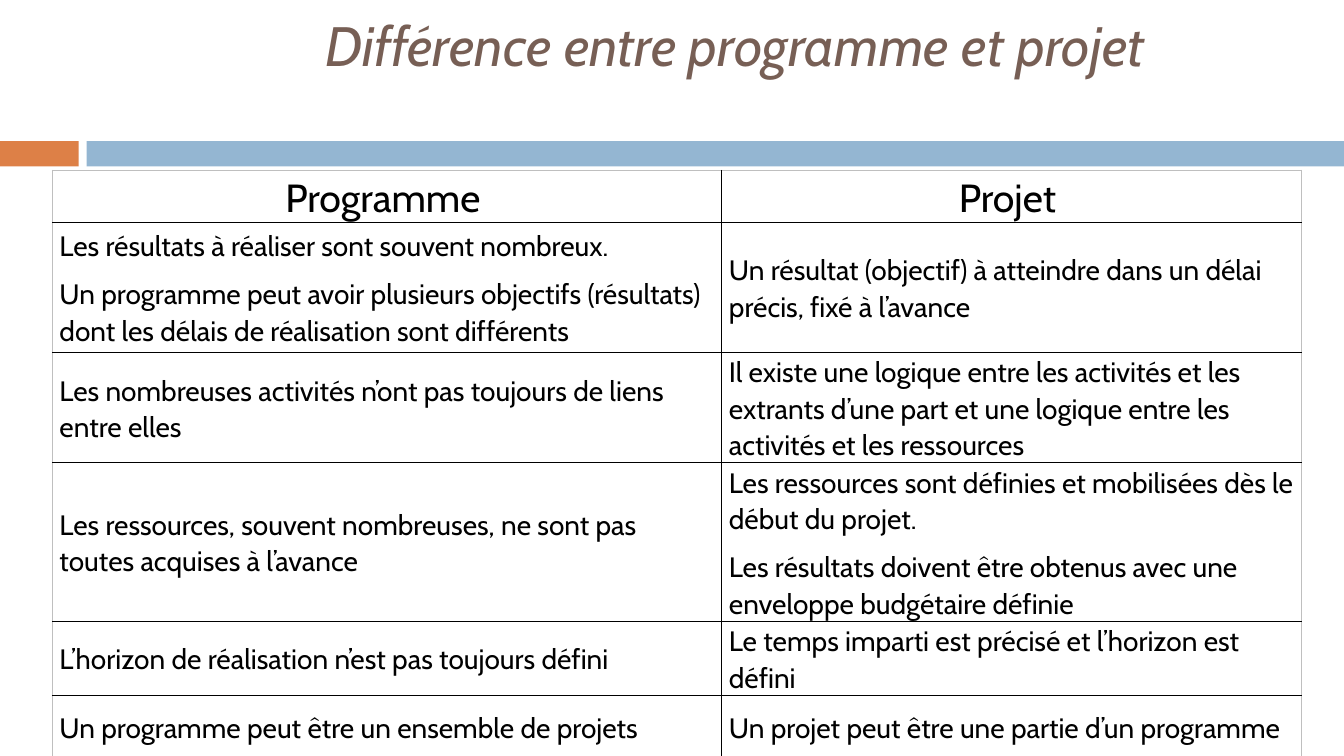
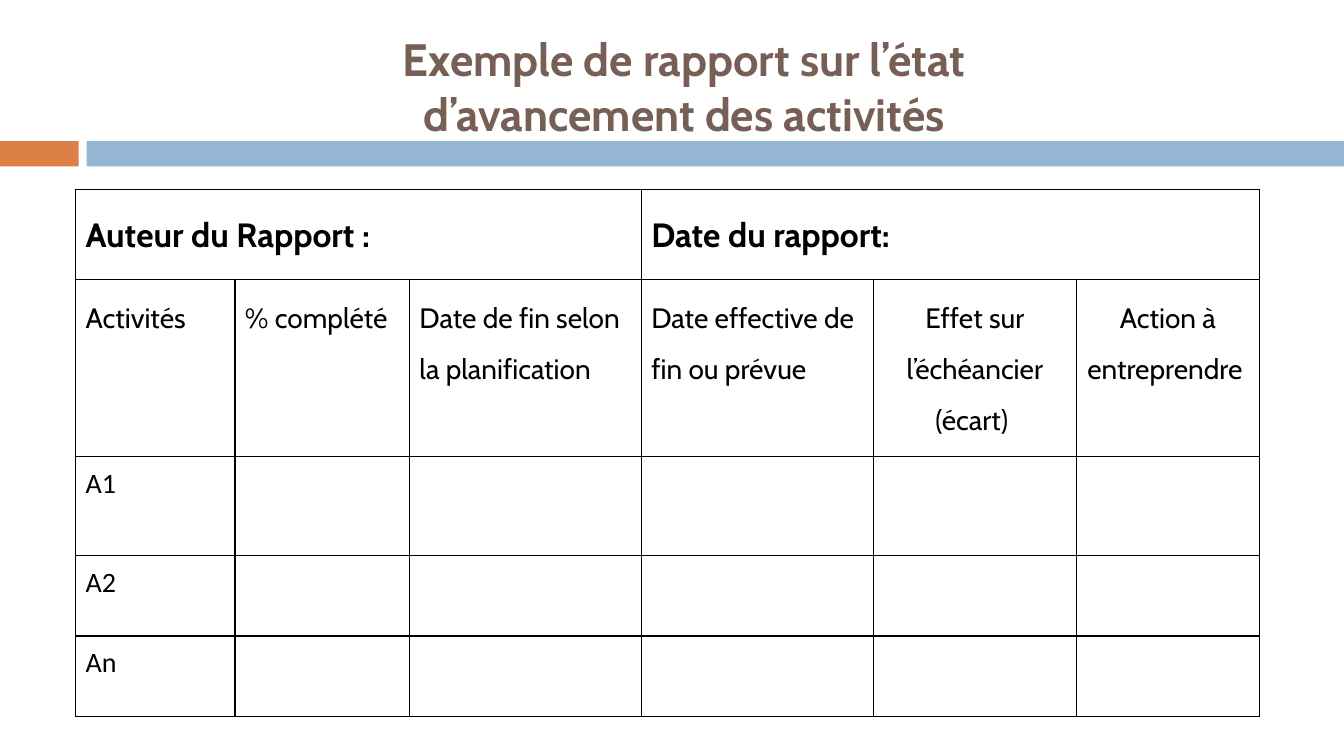
"""Build two slides comparing programmes with projects and showing a progress report."""
from lxml import etree
from pptx import Presentation
from pptx.dml.color import RGBColor
from pptx.enum.shapes import MSO_SHAPE
from pptx.enum.text import MSO_ANCHOR, MSO_AUTO_SIZE, PP_ALIGN
from pptx.oxml.ns import qn
from pptx.util import Inches, Pt

BLACK, GREY, BROWN = "000000", "BFBFBF", "775F55"
BANDS = [(0, 0.78, "DD8047"), (0.86, 12.47, "94B6D2")]

CENTERED = {"alignment": PP_ALIGN.CENTER}
TITLE_FONT = {"name": "Cabin"}
COMPARISON_PARAGRAPH = {"line_spacing": 1.07, "space_after": Pt(8)}
REPORT_PARAGRAPH = {"line_spacing": 1.5}
HEADING_FONT = {"name": "Cabin", "size": Pt(28)}
BODY_FONT = {"name": "Cabin", "size": Pt(20)}
REPORT_HEADING_FONT = {"name": "Cabin", "size": Pt(24), "bold": True}
ACTIVITY_FONT = {"name": "Calibri", "size": Pt(20)}

COMPARISON = {
    "title": ["Différence entre programme et projet"],
    "title_box": (2.09, 0.18, 10.4, 1.08),
    "title_margins": {"margin_top": 0, "margin_bottom": Inches(0.56)},
    "title_font": {"size": Pt(39.6), "italic": True},
    "table_corner": (0.52, 1.69),
    "columns": [6.64, 5.75],
    "row_heights": [0.31, 1.29, 0.96, 1.29, 0.63, 0.63],
    "outer_border": GREY,
    "cell_format": {
        "vertical_anchor": MSO_ANCHOR.MIDDLE,
        "margin_left": Inches(0.07),
        "margin_right": Inches(0.07),
        "margin_top": Inches(0.01),
        "margin_bottom": 0,
    },
    "rows": [
        ["Programme ", "Projet "],
        ["Les résultats à réaliser sont souvent nombreux.\n"
         "Un programme peut avoir plusieurs objectifs (résultats) "
         "dont les délais de réalisation sont différents",
         "Un résultat (objectif) à atteindre dans un délai précis, fixé à l’avance"],
        ["Les nombreuses activités n’ont pas toujours de liens entre elles",
         "Il existe une logique entre les activités et les extrants d’une part "
         "et une logique entre les activités et les ressources"],
        ["Les ressources, souvent nombreuses, ne sont pas toutes acquises à l’avance",
         "Les ressources sont définies et mobilisées dès le début du projet.\n"
         "Les résultats doivent être obtenus avec une enveloppe budgétaire définie"],
        ["L’horizon de réalisation n’est pas toujours défini",
         "Le temps imparti est précisé et l’horizon est défini"],
        ["Un programme peut être un ensemble de projets",
         "Un projet peut être une partie d’un programme"],
    ],
    "row_styles": [(COMPARISON_PARAGRAPH | CENTERED, HEADING_FONT)]
    + [(COMPARISON_PARAGRAPH, BODY_FONT)] * 5,
}

REPORT = {
    "title": ["Exemple de rapport sur l’état ", "d’avancement des activités "],
    "title_box": (0.89, 0.25, 11.89, 1.2),
    "title_font": {"size": Pt(32.4), "bold": True},
    "table_corner": (0.75, 1.88),
    "columns": [1.58, 1.73, 2.3, 2.3, 2.02, 1.81],
    "row_heights": [0.89, 1.76, 0.98, 0.8, 0.8],
    "outer_border": BLACK,
    "spans": [(0, 0, 2), (0, 3, 5)],
    "centered_cells": [(1, 4), (1, 5)],
    "rows": [
        ["Auteur du Rapport :", "", "", "Date du rapport:", "", ""],
        ["Activités", "% complété", "Date de fin selon la planification",
         "Date effective de fin ou prévue",
         "Effet sur l’échéancier\n(écart) ", "Action à entreprendre "],
        ["A1"], ["A2"], ["An"],
    ],
    "row_styles": [(REPORT_PARAGRAPH, REPORT_HEADING_FONT), (REPORT_PARAGRAPH, BODY_FONT)]
    + [({"line_spacing": 1.15}, ACTIVITY_FONT)] * 3,
}


def color(value):
    return RGBColor.from_string(value)


def apply(target, values):
    for name, value in values.items():
        setattr(target, name, value)


def write(text_frame, lines, paragraph_format, font_format, font_color):
    for index, line in enumerate(lines):
        paragraph = text_frame.add_paragraph() if index else text_frame.paragraphs[0]
        apply(paragraph, paragraph_format)
        run = paragraph.add_run()
        run.text = line
        apply(run.font, font_format)
        run.font.color.rgb = color(font_color)


def add_bands(slide):
    layout_tree = slide.slide_layout.shapes.element
    for left, width, fill in BANDS:
        band = slide.shapes.add_shape(
            MSO_SHAPE.RECTANGLE, Inches(left), Inches(1.4), Inches(width), Inches(0.25))
        band.shadow.inherit = False
        band.fill.solid()
        band.fill.fore_color.rgb = color(fill)
        band.line.fill.background()
        layout_tree.append(band.element)


def add_title(slide, content):
    title = slide.shapes.title
    edges = map(Inches, content["title_box"])
    apply(title, dict(zip(("left", "top", "width", "height"), edges)))
    frame = title.text_frame
    apply(frame, {"auto_size": MSO_AUTO_SIZE.NONE, "word_wrap": True,
                  "vertical_anchor": MSO_ANCHOR.MIDDLE})
    apply(frame, content.get("title_margins", {}))
    write(frame, content["title"], CENTERED, TITLE_FONT | content["title_font"], BROWN)


def set_borders(cell, border_colors):
    properties = cell._tc.get_or_add_tcPr()
    for side, value in border_colors.items():
        line = etree.SubElement(properties, qn(f"a:ln{side}"), w=str(Pt(1)))
        fill = etree.SubElement(line, qn("a:solidFill"))
        etree.SubElement(fill, qn("a:srgbClr"), val=value)


def add_table(slide, content):
    columns, heights = content["columns"], content["row_heights"]
    left, top = content["table_corner"]
    table = slide.shapes.add_table(
        len(heights), len(columns), Inches(left), Inches(top),
        Inches(sum(columns)), Inches(sum(heights))).table
    apply(table, {"first_row": False, "horz_banding": False})
    for column, width in zip(table.columns, columns):
        column.width = Inches(width)
    for row, height in zip(table.rows, heights):
        row.height = Inches(height)
    for row, first, last in content.get("spans", []):
        table.cell(row, first).merge(table.cell(row, last))

    outer = content["outer_border"]
    last_row, last_column = len(heights) - 1, len(columns) - 1
    for row_index, row in enumerate(table.rows):
        texts = content["rows"][row_index]
        paragraph_format, font_format = content["row_styles"][row_index]
        for column_index, cell in enumerate(row.cells):
            set_borders(cell, {
                "L": BLACK if column_index else outer,
                "R": BLACK if column_index < last_column else outer,
                "T": BLACK if row_index else outer,
                "B": BLACK if row_index < last_row else outer,
            })
            cell.fill.background()
            apply(cell, content.get("cell_format", {}))
            if column_index < len(texts) and texts[column_index]:
                centered = (row_index, column_index) in content.get("centered_cells", [])
                write(cell.text_frame, texts[column_index].split("\n"),
                      paragraph_format | (CENTERED if centered else {}), font_format, BLACK)


def main():
    presentation = Presentation()
    presentation.slide_width, presentation.slide_height = Inches(13.33), Inches(7.5)
    layout = presentation.slide_layouts.get_by_name("Title Only")
    for index, content in enumerate((COMPARISON, REPORT)):
        slide = presentation.slides.add_slide(layout)
        if index == 0:
            add_bands(slide)
        add_title(slide, content)
        add_table(slide, content)
    presentation.save("out.pptx")


if __name__ == "__main__":
    main()
